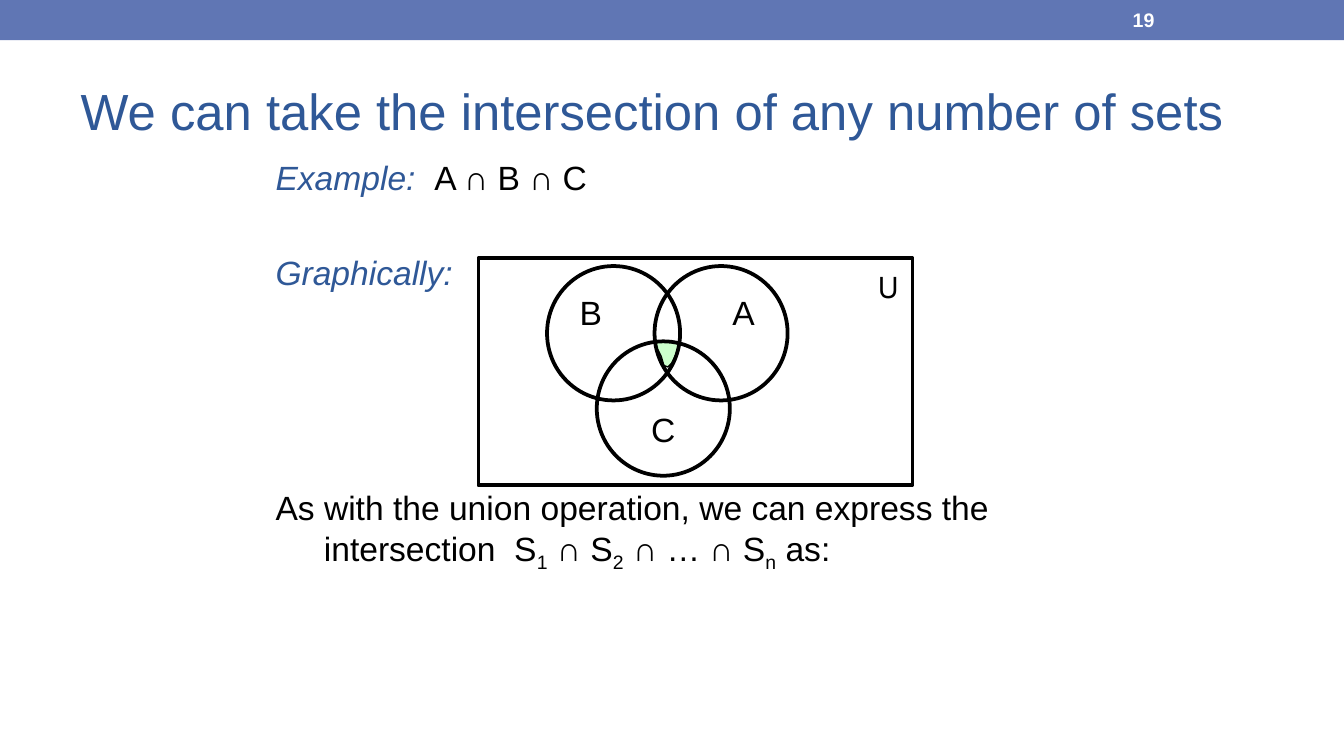
import lxml.etree
import pptx
import pptx.util
import pptx.dml.color
import pptx.enum.shapes
import pptx.enum.text
import pptx.oxml.ns

Inches, Pt = pptx.util.Inches, pptx.util.Pt
ALIGN = pptx.enum.text.PP_ALIGN
ANCHOR = pptx.enum.text.MSO_ANCHOR
SHAPE = pptx.enum.shapes.MSO_SHAPE

# Content
BLUE, BLACK, WHITE, BAR, GREEN = "2F5897", "000000", "FFFFFF", "6076B4", "CCFFCC"
TITLE = "We can take the intersection of any number of sets"
PAGE_NUMBER = "19"
# Each paragraph: points of space before, then (text, style) runs
BODY = [
    (3.6, [("Example:  ", "label"), ("A ∩ B ∩ C", "plain")]),
    (29, [("Graphically:", "label")]),
    (104.5, [
        ("As with the union operation, we can express the intersection  S", "plain"),
        ("1", "subscript"), (" ∩ S", "plain"), ("2", "subscript"),
        (" ∩ … ∩ S", "plain"), ("n", "subscript"), (" as:", "plain"),
    ]),
]
UNIVERSE = (SHAPE.RECTANGLE, "U", (3.56, 1.92, 3.23, 1.69), ALIGN.RIGHT, ANCHOR.TOP, "Karla")
SETS = [
    ("B", 4.07, 1.98, ALIGN.LEFT, ANCHOR.TOP),
    ("A", 4.87, 1.98, ALIGN.RIGHT, ANCHOR.TOP),
    ("C", 4.44, 2.54, ALIGN.CENTER, ANCHOR.BOTTOM),
]
CIRCLE_SIZE = (0.99, 1)
COMMON_REGION = [
    (4.88, 2.54), (4.88, 2.58), (4.9, 2.61), (4.92, 2.65), (4.94, 2.72), (4.97, 2.73),
    (5, 2.7), (5.02, 2.66), (5.05, 2.6), (5.05, 2.56), (4.97, 2.54),
]


def color(value):
    return pptx.dml.color.RGBColor.from_string(value)


def set_font(font, size, value, name="Arial"):
    font.name, font.size = name, Pt(size)
    font.color.rgb = color(value)


def place(shape, left, top, width, height):
    shape.left, shape.top = Inches(left), Inches(top)
    shape.width, shape.height = Inches(width), Inches(height)


def paint(shape, fill=None, line=None, width=2):
    shape.shadow.inherit = False
    if fill:
        shape.fill.solid()
        shape.fill.fore_color.rgb = color(fill)
    else:
        shape.fill.background()
    if line:
        shape.line.color.rgb = color(line)
        shape.line.width = Pt(width)
    else:
        shape.line.fill.background()


def add_outline(kind, label, box, align, anchor, font_name="Arial"):
    shape = slide.shapes.add_shape(kind, *map(Inches, box))
    paint(shape, line=BLACK)
    shape.text_frame.vertical_anchor = anchor
    paragraph = shape.text_frame.paragraphs[0]
    paragraph.text, paragraph.alignment = label, align
    set_font(paragraph.font, 18, BLACK, font_name)


# Widescreen page, 16:9
presentation = pptx.Presentation()
presentation.slide_width = Inches(10)
presentation.slide_height = Inches(10 * 9 / 16)
slide = presentation.slides.add_slide(presentation.slide_layouts[1])
title, body = slide.placeholders

# Header bar and page number
bar = slide.shapes.add_shape(SHAPE.RECTANGLE, 0, 0, Inches(10), Inches(0.3))
paint(bar, fill=BAR)
number = slide.shapes.add_textbox(*map(Inches, (8.33, 0.01, 1.17, 0.27)))
number.text_frame.word_wrap = True
number.text_frame.vertical_anchor = ANCHOR.MIDDLE
paragraph = number.text_frame.paragraphs[0]
paragraph.text = PAGE_NUMBER
set_font(paragraph.font, 10.5, WHITE)
paragraph.font.bold = True

# Title
place(title, 0.5, 0.44, 9, 0.81)
title.text_frame.auto_size = pptx.enum.text.MSO_AUTO_SIZE.NONE
title.text_frame.vertical_anchor = ANCHOR.MIDDLE
paragraph = title.text_frame.paragraphs[0]
paragraph.text, paragraph.alignment, paragraph.line_spacing = TITLE, ALIGN.LEFT, 0.9
set_font(paragraph.font, 27.2, BLUE)

# Body text with hanging indents and no bullets
place(body, 1.81, 1.12, 6.81, 3.88)
frame = body.text_frame
frame.auto_size = pptx.enum.text.MSO_AUTO_SIZE.NONE
for index, (space, runs) in enumerate(BODY):
    paragraph = frame.paragraphs[0] if index == 0 else frame.add_paragraph()
    paragraph.space_before = Pt(space)
    properties = paragraph._p.get_or_add_pPr()
    properties.set("marL", str(Inches(0.5)))
    properties.set("indent", str(Inches(-0.36)))
    lxml.etree.SubElement(properties, pptx.oxml.ns.qn("a:buNone"))
    for text, style in runs:
        run = paragraph.add_run()
        run.text = text
        set_font(run.font, 18, BLUE if style == "label" else BLACK)
        if style == "label":
            run.font.italic = True
        elif style == "subscript":
            run.font._element.set("baseline", "-25000")

# Venn diagram
add_outline(*UNIVERSE)
points = [(Inches(x), Inches(y)) for x, y in COMMON_REGION]
builder = slide.shapes.build_freeform(*points[0])
builder.add_line_segments(points[1:], close=True)
paint(builder.convert_to_shape(), fill=GREEN, line=BLACK, width=0.75)
for label, left, top, align, anchor in SETS:
    add_outline(SHAPE.OVAL, label, (left, top, *CIRCLE_SIZE), align, anchor)

presentation.save("out.pptx")
